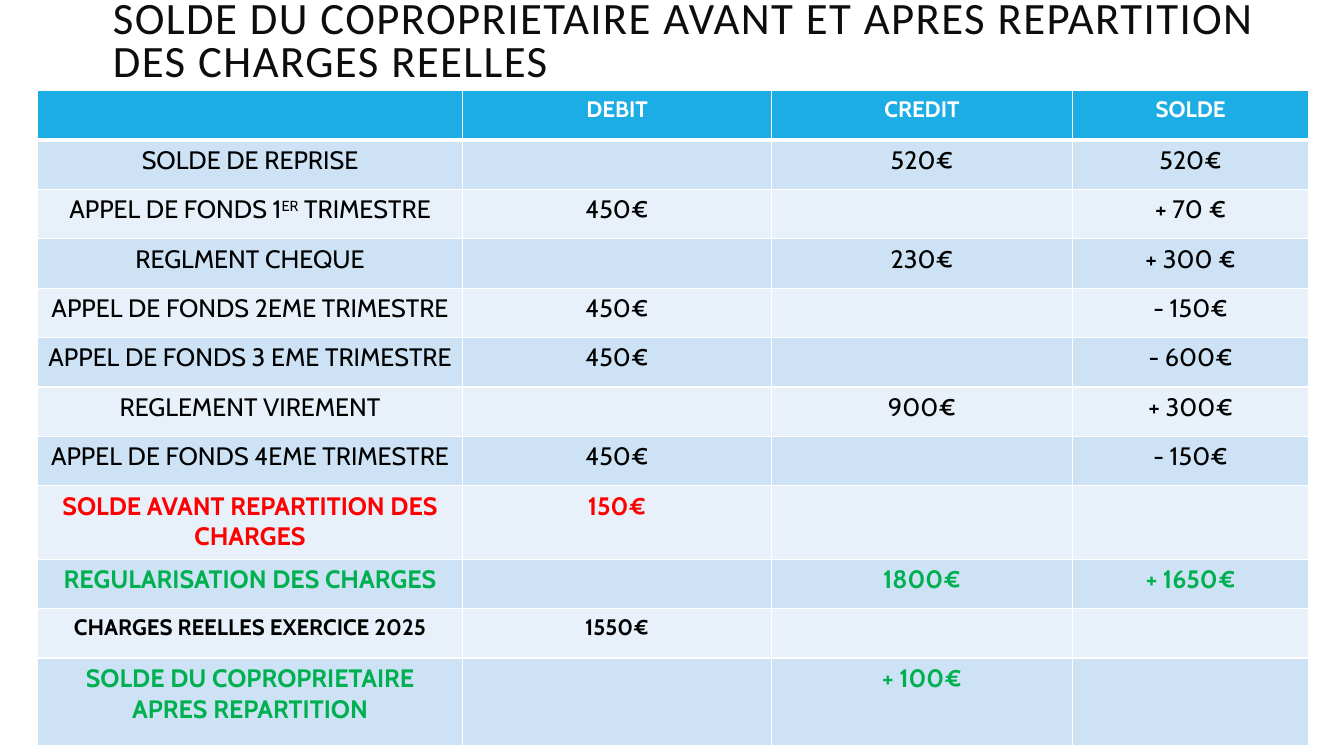
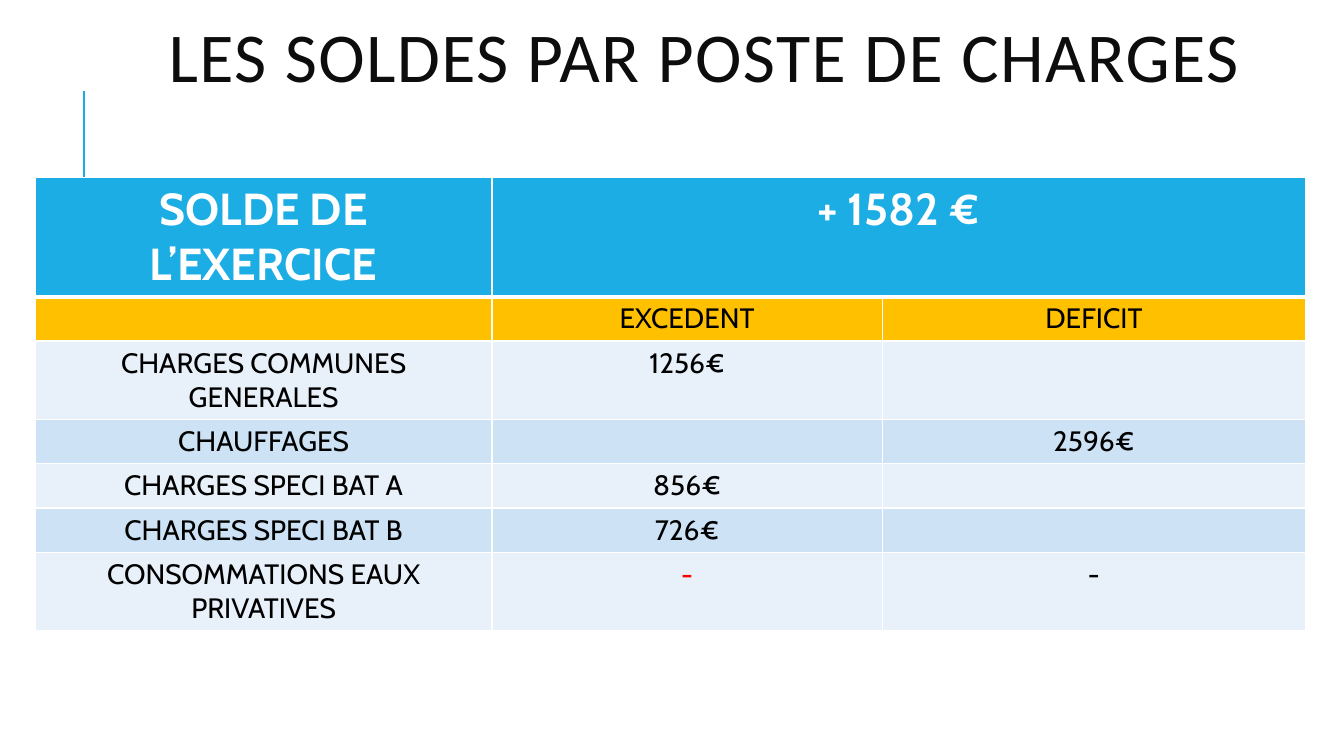
import dataclasses

import lxml.etree
import pptx
import pptx.dml.color
import pptx.enum.shapes
import pptx.enum.text
import pptx.oxml.ns
import pptx.util

Inches = pptx.util.Inches
Pt = pptx.util.Pt
Align = pptx.enum.text.PP_ALIGN
qn = pptx.oxml.ns.qn


def rgb(value):
    return pptx.dml.color.RGBColor.from_string(value)


@dataclasses.dataclass(frozen=True)
class TextStyle:
    size: int
    color: str = "000000"
    bold: bool = False


@dataclasses.dataclass(frozen=True)
class Theme:
    title_font: str = "Calibri"
    table_font: str = "Cabin"
    title_color: str = "0D0D0D"
    accent: str = "1CADE4"
    subheader: str = "FFC000"
    bands: tuple = ("E8F1FA", "CDE3F5")
    border: str = "FFFFFF"
    header: TextStyle = TextStyle(16, "FFFFFF", True)
    entry: TextStyle = TextStyle(18)
    debt: TextStyle = TextStyle(18, "FF0000", True)
    surplus: TextStyle = TextStyle(18, "00B050", True)
    actual: TextStyle = TextStyle(16, bold=True)
    total: TextStyle = TextStyle(32, "FFFFFF", True)
    post: TextStyle = TextStyle(20)
    alert: TextStyle = TextStyle(20, "FF0000")


class Deck:
    def __init__(self, theme):
        self.theme = theme
        self.prs = pptx.Presentation()
        self.prs.slide_width = Inches(13.33)
        self.prs.slide_height = Inches(7.5)
        self.layout = self.prs.slide_layouts[5]
        self.slide = None

    def new_slide(self):
        self.slide = self.prs.slides.add_slide(self.layout)

    def layout_rule(self, x, top, bottom):
        rule = self.slide.shapes.add_connector(
            pptx.enum.shapes.MSO_CONNECTOR.STRAIGHT,
            Inches(x), Inches(bottom), Inches(x), Inches(top))
        rule.line.color.rgb = rgb(self.theme.accent)
        rule.line.width = Pt(1.5)
        properties = rule.element.find(qn("p:spPr"))
        lxml.etree.SubElement(properties, qn("a:effectLst"))
        self.layout.placeholders[0].element.getparent().append(rule.element)

    def title(self, text, top, height, size, align):
        title = self.slide.shapes.title
        title.left, title.top = Inches(1.02), Inches(top)
        title.width, title.height = Inches(11.93), Inches(height)
        frame = title.text_frame
        frame.text = text
        frame.word_wrap = True
        frame.auto_size = pptx.enum.text.MSO_AUTO_SIZE.NONE
        frame.vertical_anchor = pptx.enum.text.MSO_ANCHOR.MIDDLE
        paragraph = frame.paragraphs[0]
        paragraph.alignment = align
        paragraph.line_spacing = 0.8
        paragraph.font.name = self.theme.title_font
        paragraph.font.size = Pt(size)
        paragraph.font.color.rgb = rgb(self.theme.title_color)
        paragraph.runs[0]._r.get_or_add_rPr().set("spc", "100")

    def table(self, left, top, widths, heights):
        frame = self.slide.shapes.add_table(
            len(heights), len(widths), Inches(left), Inches(top),
            Inches(sum(widths)), Inches(sum(heights)))
        table = frame.table
        table.first_row = table.horz_banding = False
        for column, width in zip(table.columns, widths):
            column.width = Inches(width)
        for row, height in zip(table.rows, heights):
            row.height = Inches(height)
        return table

    def row(self, table, index, texts, style, fill):
        for column, text in enumerate(texts):
            cell = table.cell(index, column)
            self.borders(cell, 3 if index == 1 else 1, 3 if index == 0 else 1)
            cell.fill.solid()
            cell.fill.fore_color.rgb = rgb(fill)
            if text:
                self.cell_text(cell, text, style)

    def cell_text(self, cell, text, style):
        paragraph = cell.text_frame.paragraphs[0]
        paragraph.alignment = Align.CENTER
        paragraph.font.name = self.theme.table_font
        paragraph.font.size = Pt(style.size)
        paragraph.font.bold = style.bold
        paragraph.font.color.rgb = rgb(style.color)
        for position, part in enumerate(text.split("^")):
            run = paragraph.add_run()
            run.text = part
            if position % 2:
                run._r.get_or_add_rPr().set("baseline", "30000")

    def borders(self, cell, top, bottom):
        properties = cell._tc.get_or_add_tcPr()
        for side, width in (("L", 1), ("R", 1), ("T", top), ("B", bottom)):
            line = lxml.etree.SubElement(
                properties, qn("a:ln" + side), w=str(int(Pt(width))))
            fill = lxml.etree.SubElement(line, qn("a:solidFill"))
            lxml.etree.SubElement(
                fill, qn("a:srgbClr"), val=self.theme.border)


def owner_balance(deck):
    theme = deck.theme
    deck.new_slide()
    deck.layout_rule(0.83, 0.9, 1.9)
    deck.title("SOLDE DU COPROPRIETAIRE AVANT ET APRES REPARTITION "
               "DES CHARGES REELLES", 0.1, 0.65, 32, Align.LEFT)
    entries = [
        (theme.entry, "SOLDE DE REPRISE", "", "520€", "520€"),
        (theme.entry, "APPEL DE FONDS 1^ER^ TRIMESTRE", "450€", "", "+ 70 €"),
        (theme.entry, "REGLMENT CHEQUE", "", "230€", "+ 300 €"),
        (theme.entry, "APPEL DE FONDS 2EME TRIMESTRE", "450€", "", "- 150€"),
        (theme.entry, "APPEL DE FONDS 3 EME TRIMESTRE", "450€", "", "- 600€"),
        (theme.entry, "REGLEMENT VIREMENT", "", "900€", "+ 300€"),
        (theme.entry, "APPEL DE FONDS 4EME TRIMESTRE", "450€", "", "- 150€"),
        (theme.debt, "SOLDE AVANT REPARTITION DES CHARGES", "150€", "", ""),
        (theme.surplus, "REGULARISATION DES CHARGES", "", "1800€", "+ 1650€"),
        (theme.actual, "CHARGES REELLES EXERCICE 2025", "1550€", "", ""),
        (theme.surplus, "SOLDE DU COPROPRIETAIRE APRES REPARTITION",
         "", "+ 100€", ""),
    ]
    heights = [0.49] * 8 + [0.73, 0.49, 0.49, 0.87]
    account = deck.table(0.37, 0.9, (4.22, 3.06, 2.99, 2.34), heights)
    deck.row(account, 0, ("", "DEBIT", "CREDIT", "SOLDE"),
             theme.header, theme.accent)
    for index, (style, *texts) in enumerate(entries, 1):
        deck.row(account, index, texts, style, theme.bands[index % 2])


def post_balances(deck):
    theme = deck.theme
    deck.new_slide()
    deck.title("LES SOLDES PAR POSTE DE CHARGES", 0.18, 0.88, 50, Align.CENTER)
    posts = [
        ("CHARGES COMMUNES GENERALES", "1256€", ""),
        ("CHAUFFAGES", "", "2596€"),
        ("CHARGES SPECI BAT A", "856€", ""),
        ("CHARGES SPECI BAT B", "726€", ""),
        ("CONSOMMATIONS EAUX PRIVATIVES", "", "-"),
    ]
    heights = (1.17, 0.44, 0.77, 0.44, 0.44, 0.44, 0.77)
    balances = deck.table(0.35, 1.76, (4.53, 3.87, 4.2), heights)
    deck.row(balances, 0, ("SOLDE DE L’EXERCICE", "+ 1582 €", ""),
             theme.total, theme.accent)
    balances.cell(0, 1).merge(balances.cell(0, 2))
    deck.row(balances, 1, ("", "EXCEDENT", "DEFICIT"),
             theme.post, theme.subheader)
    for index, texts in enumerate(posts, 2):
        deck.row(balances, index, texts, theme.post, theme.bands[index % 2])
    deck.cell_text(balances.cell(len(heights) - 1, 1), "-", theme.alert)


def main():
    deck = Deck(Theme())
    owner_balance(deck)
    post_balances(deck)
    deck.prs.save("out.pptx")


if __name__ == "__main__":
    main()
